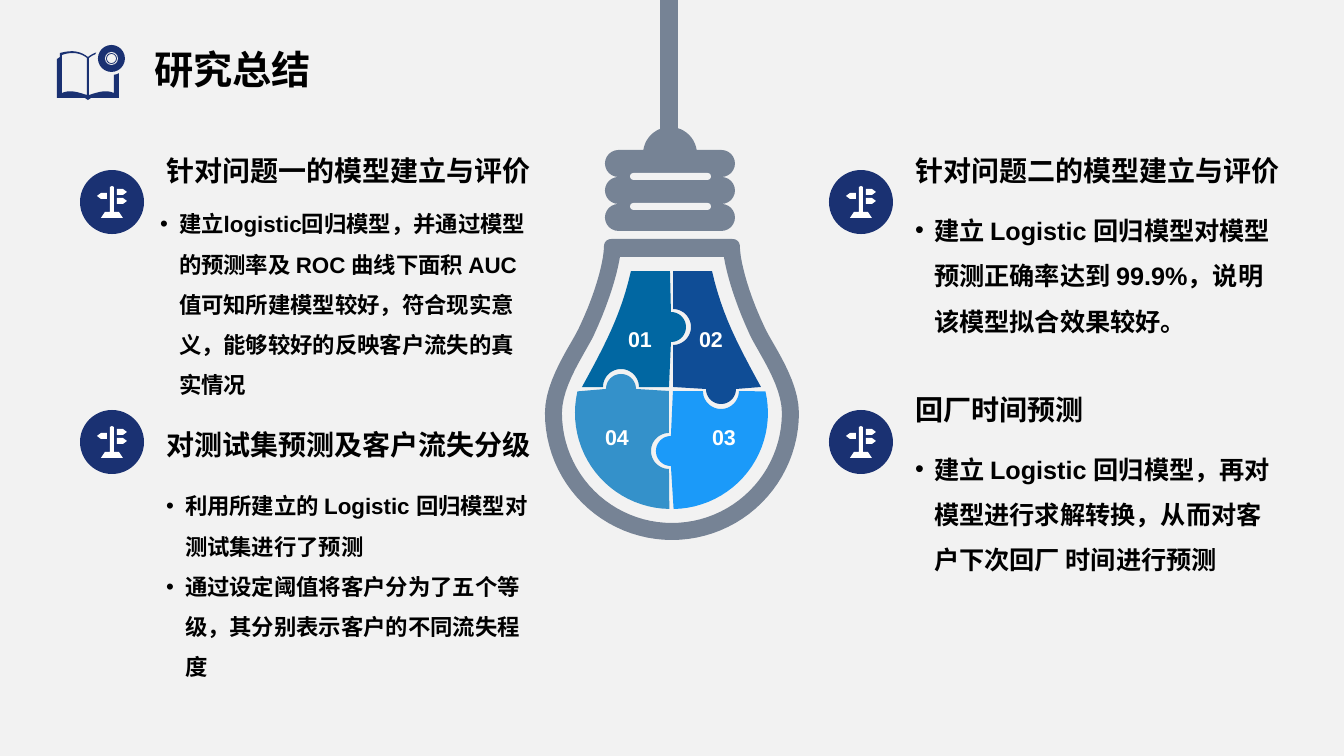
from math import cos, radians, sin
from lxml import etree
from pptx import Presentation, util as u
from pptx.dml.color import RGBColor
from pptx.enum import shapes, text
from pptx.oxml import ns

SCALE = 914400 / 100.8  # EMU in one px
FONT = "Arial"
HUES = {"back": "F2F2F2", "navy": "1A3172", "grey": "768395", "white": "FFFFFF",
        "black": "000000", "teal": "0167A2", "royal": "0F4D96",
        "azure": "1B9AF9", "sky": "3491CA"}

TITLE = "研究总结"
# badge x, y; heading text, y; body x, y, size; bullet texts
TOPICS = [
    ((80, 170), ("针对问题一的模型建立与评价", 149), (150, 192, 16),
     ["建立logistic回归模型，并通过模型的预测率及 ROC 曲线下面积 AUC 值可知所建模型较好，符合现实意义，能够较好的反映客户流失的真实情况"]),
    ((80, 410), ("对测试集预测及客户流失分级", 423), (156, 474, 16),
     ["利用所建立的 Logistic 回归模型对测试集进行了预测",
      "通过设定阈值将客户分为了五个等级，其分别表示客户的不同流失程度"]),
    ((829, 170), ("针对问题二的模型建立与评价", 149), (905, 195, 18),
     ["建立 Logistic 回归模型对模型预测正确率达到 99.9%，说明该模型拟合效果较好。"]),
    ((829, 410), ("回厂时间预测", 388), (905, 434, 18),
     ["建立 Logistic 回归模型，再对模型进行求解转换，从而对客户下次回厂 时间进行预测"]),
]
# label, its place, colour, angle of the seam that holds the knob
PIECES = [("01", (621, 326), "teal", 270), ("02", (692, 326), "royal", 0),
          ("03", (705, 424), "azure", 90), ("04", (598, 424), "sky", 180)]
HUB = (671, 389)
KNOB, NOTCH, GAP = 15, 18, 2
AXIS, BELLY = 672, 413  # centre of the bulb's round end

# Outlines: a pair is a straight step, six numbers are a Bezier step.
FLANK = [(712, 271), (722, 315, 738, 345, 761, 387)]
OUTER = [(AXIS, 239), (732, 239), (737, 239, 740, 242, 740, 247),
         (740, 256, 745, 286, 765, 328), (773, 345, 799, 380, 799, BELLY)]
INNER = [(AXIS, 257), (724, 257), (726, 269, 732, 296, 750, 335),
         (758, 352, 782, 385, 782, BELLY)]
SPINE = 88
COVER = [(SPINE, 57), (78, 49, 68, 51, 60, 53), (60, 57), (57, 59), (57, 98),
         (85, 98), (SPINE, 100)]
PAGE = [(87, 58), (80, 52, 70, 52, 62, 55), (62, 93), (71, 89, 80, 93, 87, 95)]
RINGS = [(-3, "back"), (0, "navy"), (7, "back"), (8, "navy"), (9, "back")]
POST = [(32, 16), (34, 17), (34, 42), (39, 42), (43, 48), (32, 48)]
BOARD = [(37, 0), (43, 0), (47, 3), (43, 6), (37, 6)]


def px(num):
    return u.Emu(round(num * SCALE))


def hue(name):
    return RGBColor.from_string(HUES[name])


def trace(steps, n=12):
    """Turn straight and Bezier steps into a list of points."""
    pts = [steps[0]]
    for step in steps[1:]:
        if len(step) == 2:
            pts.append(step)
            continue
        ctrl = [pts[-1], step[:2], step[2:4], step[4:]]
        for i in range(1, n + 1):
            t = i / n
            mix = ((1 - t) ** 3, 3 * t * (1 - t) ** 2, 3 * t * t * (1 - t), t ** 3)
            pts.append(tuple(sum(m * c[k] for m, c in zip(mix, ctrl)) for k in (0, 1)))
    return pts


def polar(spot, far, deg):
    return spot[0] + far * cos(radians(deg)), spot[1] + far * sin(radians(deg))


def arc(spot, size, start, end, n=24):
    return [polar(spot, size, start + (end - start) * i / n) for i in range(n + 1)]


def flip(pts, axis):
    return [(2 * axis - x, y) for x, y in reversed(pts)]


def mirror(pts):
    return pts + flip(pts, pts[0][0])


def shift(pts, dx, dy):
    return [(x + dx, y + dy) for x, y in pts]


def jigsaw(turn):
    """Outline of a piece: in along the knob seam, out along the next one."""
    side = turn - 90
    reach = {turn: 50, side: 62} if turn % 180 == 0 else {turn: 62, side: 50}
    knob = polar(HUB, reach[turn], turn)
    notch = polar(polar(HUB, reach[side], side), GAP, turn)
    corner = polar(polar(HUB, GAP, turn), GAP, side)
    if turn in (0, 270):
        rim = [(HUB[0] + GAP, FLANK[0][1])] + trace(FLANK)
    else:
        rim = arc((AXIS, BELLY), 96, -13, 89)
    if turn >= 180:
        rim = flip(rim, AXIS - 0.5)
    return (arc(knob, KNOB, turn, turn + 180) + [corner]
            + arc(notch, NOTCH, turn + 90, turn - 90) + rim)


def paint(shape, name):
    shape.shadow.inherit = False
    shape.fill.solid()
    shape.fill.fore_color.rgb = hue(name)
    shape.line.fill.background()


def draw(slide, loops, name):
    """Fill closed loops; an inner loop is a hole."""
    pen = None
    for loop in loops:
        pts = [(px(x), px(y)) for x, y in loop]
        if pen is None:
            pen = slide.shapes.build_freeform(*pts[0], scale=1.0)
        else:
            pen.move_to(*pts[0])
        pen.add_line_segments(pts[1:], close=True)
    paint(pen.convert_to_shape(), name)


def pill(slide, x, y, wide, tall, name):
    kind = shapes.MSO_SHAPE.ROUNDED_RECTANGLE
    bar = slide.shapes.add_shape(kind, px(x), px(y), px(wide), px(tall))
    bar.adjustments[0] = 0.5
    paint(bar, name)


def write(slide, area, lines, size, name="black", space=1.0, pad=10, bullet=False):
    frame = slide.shapes.add_textbox(*map(px, area)).text_frame
    frame.word_wrap = True
    frame.margin_left = frame.margin_right = px(pad)
    frame.margin_top = frame.margin_bottom = px(5)
    frame.text = "\n".join(lines)
    for para in frame.paragraphs:
        para.line_spacing = space
        font = para.runs[0].font
        font.name, font.size, font.bold = FONT, u.Pt(size), True
        font.color.rgb = hue(name)
        if bullet:
            props = para._p.get_or_add_pPr()
            props.set("marL", str(px(19)))
            props.set("indent", str(-px(19)))
            etree.SubElement(props, ns.qn("a:buFont")).set("typeface", FONT)
            etree.SubElement(props, ns.qn("a:buChar")).set("char", "•")
    return frame


def main():
    deck = Presentation()
    deck.slide_width, deck.slide_height = px(1344), px(756)
    slide = deck.slides.add_slide(deck.slide_layouts[6])
    slide.background.fill.solid()
    slide.background.fill.fore_color.rgb = hue("back")

    page = trace(PAGE)
    draw(slide, [mirror(trace(COVER)), page, flip(page, SPINE)], "navy")
    for inset, name in RINGS:
        size = 27 - 2 * inset
        pill(slide, 98 + inset, 45 + inset, size, size, name)
    head = write(slide, (144, 24, 1196, 74), [TITLE], 28, space=0.9)
    head.vertical_anchor = text.MSO_ANCHOR.BOTTOM

    cord = slide.shapes.add_connector(shapes.MSO_CONNECTOR.STRAIGHT,
                                      px(669), px(0), px(669), px(145))
    cord.line.color.rgb = hue("grey")
    cord.line.width = u.Pt(13)
    etree.SubElement(cord._element.spPr, ns.qn("a:effectLst"))
    pill(slide, 643, 127, 54, 54, "grey")
    for i in range(3):
        pill(slide, 605, 150 + 27 * i, 130, 27, "grey")
    for i in range(2):
        pill(slide, 630, 173 + 30 * i, 81, 7, "back")
    glass = [mirror(trace(half) + arc((AXIS, BELLY), size, 0, 90))
             for half, size in ((OUTER, 127), (INNER, 110))]
    draw(slide, glass, "grey")
    for label, spot, name, turn in PIECES:
        draw(slide, [jigsaw(turn)], name)
        tag = write(slide, (*spot, 38, 32), [label], 15.3, "white", 0.8, pad=0)
        tag.paragraphs[0].alignment = text.PP_ALIGN.CENTER

    sign = [mirror(POST), shift(flip(BOARD, 32), 0, 23)]
    sign += [shift(BOARD, 0, y) for y in (19, 28)]
    for (x, y), (title, top), (left, low, size), lines in TOPICS:
        pill(slide, x, y, 64, 64, "navy")
        draw(slide, [shift(loop, x, y) for loop in sign], "white")
        write(slide, (x + 76, top, 388, 45), [title], 20)
        write(slide, (left, low, 388, 200), lines, size, space=1.5, bullet=True)
    deck.save("out.pptx")


if __name__ == "__main__":
    main()
